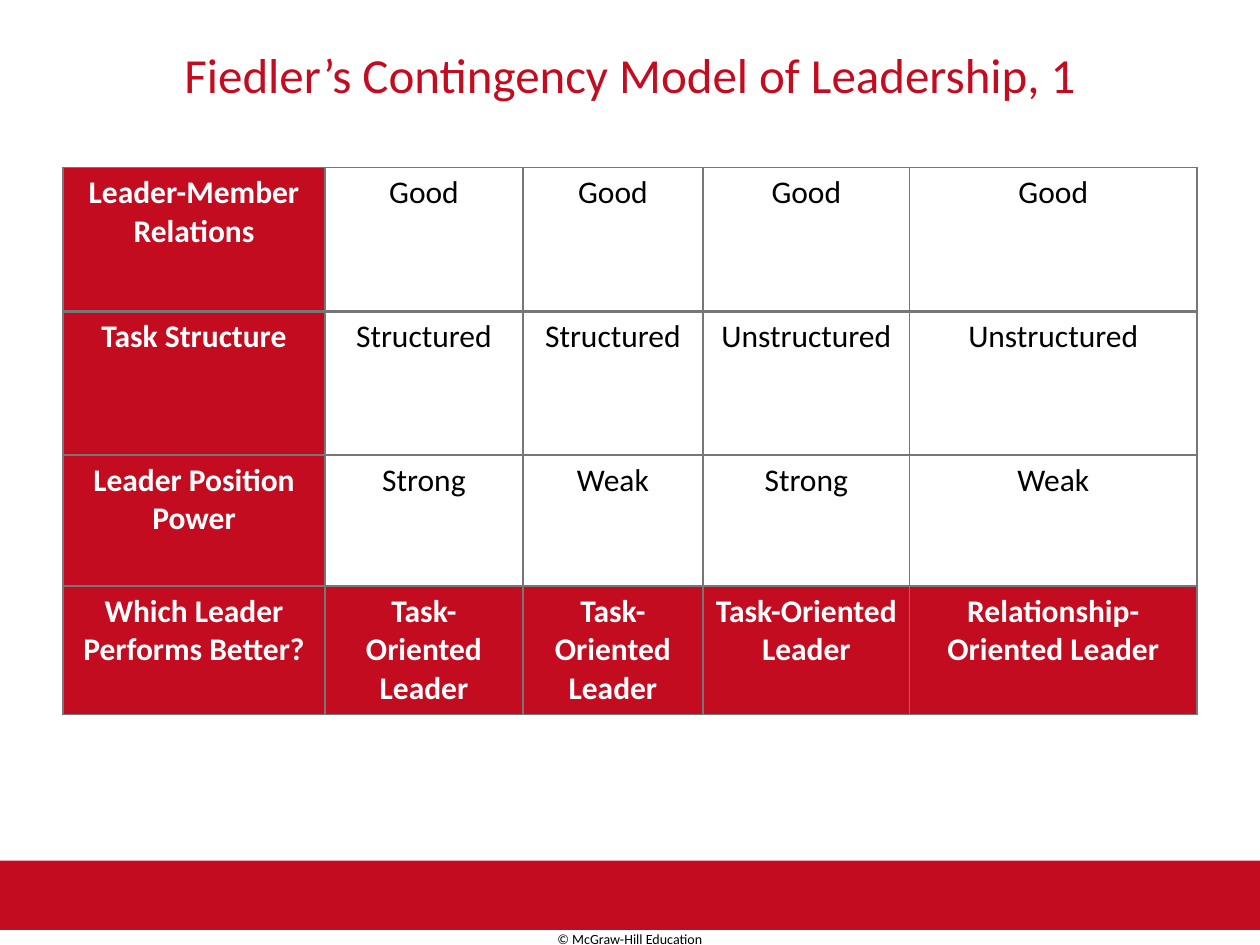
from lxml.etree import SubElement
from pptx import Presentation
from pptx.dml.color import RGBColor
from pptx.enum.shapes import MSO_SHAPE as Shape
from pptx.enum.text import MSO_ANCHOR as Anchor, PP_ALIGN as Align
from pptx.oxml.ns import qn
from pptx.util import Inches, Pt

RED = RGBColor(0xC3, 0x0C, 0x20)
GREY = RGBColor(0x77, 0x77, 0x77)
WHITE = RGBColor(0xFF, 0xFF, 0xFF)
BLACK = RGBColor(0, 0, 0)

TITLE = {"size": Pt(28), "bold": False}
NOTE = {"size": Pt(8), "bold": False}
HEAD = {"size": Pt(18), "bold": True}
BODY = {"size": Pt(18), "bold": False}

COLS = [2.08, 1.57, 1.43, 1.64, 2.28]
ROWS = [1.14, 1.14, 1.04, 1.02]
CELLS = [
    ["Leader-Member Relations"] + ["Good"] * 4,
    ["Task Structure"] + ["Structured"] * 2 + ["Unstructured"] * 2,
    ["Leader Position Power"] + ["Strong", "Weak"] * 2,
    ["Which Leader Performs Better?"] + ["Task-Oriented Leader"] * 3
    + ["Relationship-Oriented Leader"],
]


def write(frame, text, color, look):
    para = frame.paragraphs[0]
    para.alignment = Align.CENTER
    run = para.add_run()
    run.text = text
    run.font.name = "Calibri"
    run.font.color.rgb = color
    for key, value in look.items():
        setattr(run.font, key, value)


def add_label(slide, box, text, color, look):
    frame = slide.shapes.add_textbox(*map(Inches, box)).text_frame
    frame.word_wrap = True
    frame.vertical_anchor = Anchor.MIDDLE
    write(frame, text, color, look)


def add_foot(slide, box):
    left, top, width, height = box
    band = slide.shapes.add_shape(Shape.RECTANGLE, *map(Inches, box))
    band.shadow.inherit = False
    band.fill.solid()
    band.fill.fore_color.rgb = RED
    band.line.fill.background()
    note = (left + width / 4, top + height - 0.05, width / 2, 0.24)
    add_label(slide, note, "© McGraw-Hill Education", BLACK, NOTE)


def add_edge(cell, side, width):
    line = SubElement(cell._tc.get_or_add_tcPr(), qn(f"a:ln{side}"), w=str(Pt(width)))
    fill = SubElement(line, qn("a:solidFill"))
    SubElement(fill, qn("a:srgbClr"), val=str(GREY))


def add_grid(slide, box):
    grid = slide.shapes.add_table(len(ROWS), len(COLS), *map(Inches, box)).table
    grid.first_row = grid.horz_banding = False
    for col, width in zip(grid.columns, COLS):
        col.width = Inches(width)
    for row, height in zip(grid.rows, ROWS):
        row.height = Inches(height)
    for r, line in enumerate(CELLS):
        for c, text in enumerate(line):
            cell = grid.cell(r, c)
            edges = {"L": 1, "R": 1, "T": 2 if r == 1 else 1, "B": 2 if r == 0 else 1}
            for side, width in edges.items():
                add_edge(cell, side, width)
            head = c == 0 or r == len(ROWS) - 1
            if head:
                cell.fill.solid()
                cell.fill.fore_color.rgb = RED
            else:
                cell.fill.background()
            write(cell.text_frame, text, WHITE if head else BLACK, HEAD if head else BODY)


def main():
    deck = Presentation()
    deck.slide_width, deck.slide_height = Inches(10), Inches(7.5)
    slide = deck.slides.add_slide(deck.slide_layouts[6])
    add_foot(slide, (0, 6.83, 10, 0.55))
    add_label(slide, (0, 0.25, 10, 0.67),
              "Fiedler’s Contingency Model of Leadership, 1", RED, TITLE)
    add_grid(slide, (0.5, 1.33, sum(COLS), sum(ROWS)))
    deck.save("out.pptx")


if __name__ == "__main__":
    main()
